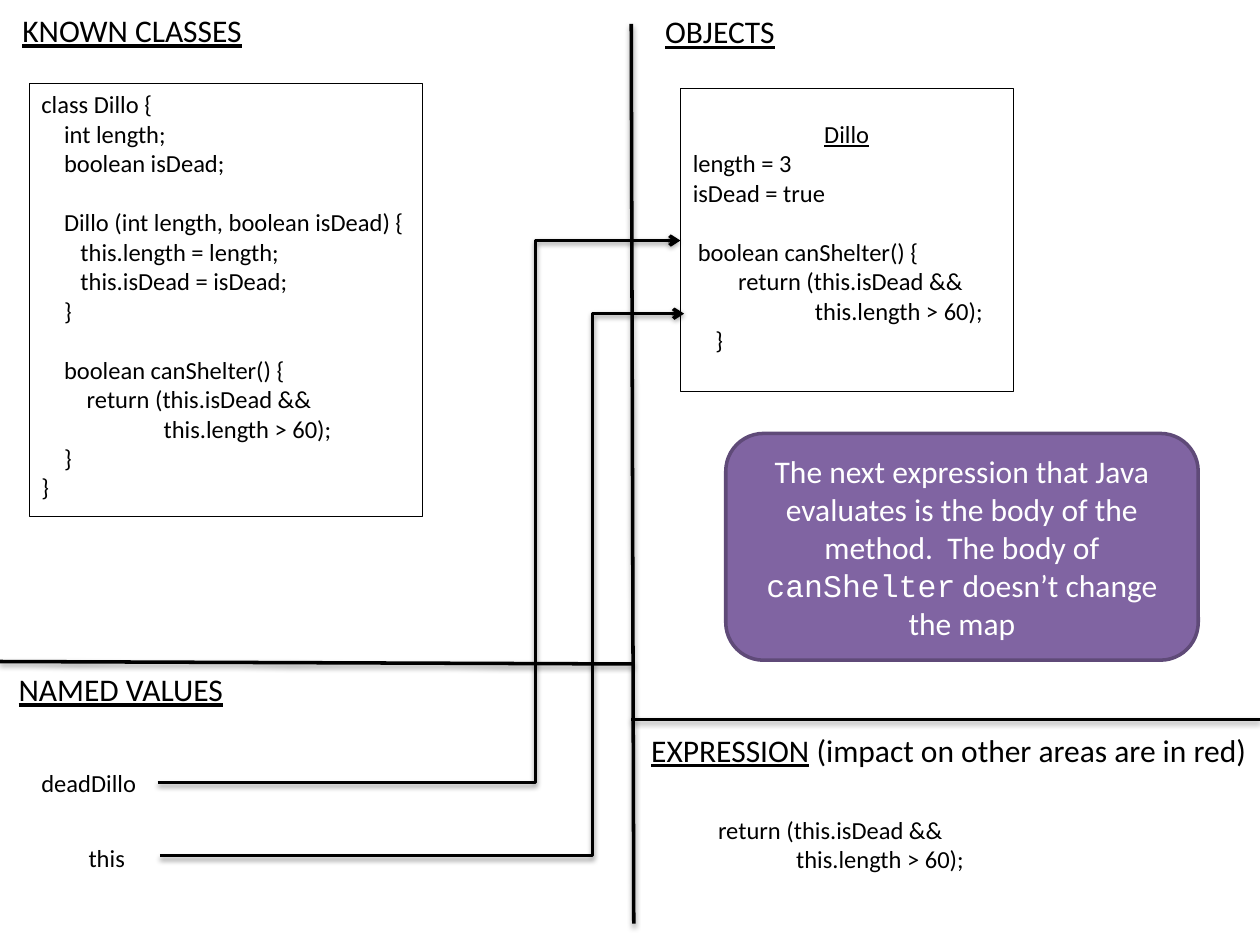
from lxml.etree import SubElement
from pptx import Presentation
from pptx.dml.color import RGBColor
from pptx.enum.shapes import MSO_CONNECTOR, MSO_SHAPE
from pptx.enum.text import MSO_ANCHOR, MSO_AUTO_SIZE, PP_ALIGN
from pptx.oxml import parse_xml
from pptx.oxml.ns import nsdecls, qn
from pptx.util import Inches, Pt

COLORS = {"ink": "000000", "white": "FFFFFF", "note": "8064A2", "note_edge": "5F4A78"}
BODY_FONT, CODE_FONT = "Calibri", "Courier New"
CODE_LINE = 17  # points left free by an empty line of code

# left, top, width, height, underlined words, plain words
HEADINGS = [
    (0.08, 0.04, 1.97, 0.4, "KNOWN CLASSES", ""),
    (5.18, 0.05, 1.09, 0.4, "OBJECTS", ""),
    (0.05, 5.27, 1.86, 0.4, "NAMED VALUES", ""),
    (5.07, 5.75, 4.98, 0.4, "EXPRESSION", " (impact on other areas are in red)"),
]
DIVIDERS = [(5.01, 0.19, 5.03, 7.33), (0, 5.25, 5.03, 5.27), (5.01, 5.71, 10, 5.71)]

# Code lines: indent in inches, words, empty lines before
CLASS_CODE = [
    (0, "class Dillo {", 0),
    (0.18, "int length;", 0),
    (0.18, "boolean isDead;", 0),
    (0.18, "Dillo (int length, boolean isDead) {", 1),
    (0.31, "this.length = length;", 0),
    (0.31, "this.isDead = isDead;", 0),
    (0.18, "}", 0),
    (0.18, "boolean canShelter() {", 1),
    (0.36, "return (this.isDead &&", 0),
    (0.97, "this.length > 60);", 0),
    (0.18, "}", 0),
    (0, "}", 0),
]
OBJECT_CODE = [
    (0, "Dillo", 0),
    (0, "length = 3", 0),
    (0, "isDead = true", 0),
    (0.04, "boolean canShelter() {", 1),
    (0.36, "return (this.isDead &&", 0),
    (0.97, "this.length > 60);", 0),
    (0.18, "}", 0),
]
EXPRESSION_CODE = [
    (0.04, "return (this.isDead &&", 0),
    (0.66, "this.length > 60);", 0),
]
# Name, its box, its alignment, then the arrow: start, end, x of the bend
NAMED_VALUES = [
    ("deadDillo", (0.23, 5.98, 1.01, 0.47), PP_ALIGN.LEFT, (1.25, 6.21), (5.4, 1.91), 4.25),
    ("this", (0.32, 6.57, 0.77, 0.47), PP_ALIGN.RIGHT, (1.27, 6.79), (5.43, 2.49), 4.7),
]
NOTE = [
    ("The next expression that Java evaluates is the body of the method.  The body of ", BODY_FONT),
    ("canShelter", CODE_FONT),
    (" doesn’t change the map", BODY_FONT),
]


def color(name):
    return RGBColor.from_string(COLORS[name])


def set_font(font, size, ink="ink", name=BODY_FONT):
    font.name, font.size = name, Pt(size)
    font.color.rgb = color(ink)


def add_text_box(slide, box, anchor=MSO_ANCHOR.MIDDLE):
    shape = slide.shapes.add_textbox(*map(Inches, box))
    shape.text_frame.word_wrap = True
    shape.text_frame.vertical_anchor = anchor
    return shape


def add_box(slide, preset, box, line, width, fill=None):
    shape = slide.shapes.add_shape(preset, *map(Inches, box))
    shape.shadow.inherit = False
    if fill:
        shape.fill.solid()
        shape.fill.fore_color.rgb = color(fill)
    else:
        shape.fill.background()
    shape.line.color.rgb = color(line)
    shape.line.width = Pt(width)
    shape.text_frame.word_wrap = True
    return shape


def write_code(shape, lines, anchor=MSO_ANCHOR.MIDDLE):
    frame = shape.text_frame
    frame.vertical_anchor = anchor
    for index, (indent, words, gap) in enumerate(lines):
        paragraph = frame.add_paragraph() if index else frame.paragraphs[0]
        paragraph.text = words
        paragraph.alignment = PP_ALIGN.LEFT
        paragraph.space_before = Pt(gap * CODE_LINE)
        paragraph._p.get_or_add_pPr().set("marL", str(Inches(indent)))
        set_font(paragraph.font, 14)


def add_line(slide, kind, start, end):
    """Draw a black line with a soft shadow below it."""
    line = slide.shapes.add_connector(kind, *map(Inches, (*start, *end)))
    line.line.color.rgb = color("ink")
    line.line.width = Pt(2)
    line._element.spPr.append(parse_xml(
        f'<a:effectLst {nsdecls("a")}><a:outerShdw blurRad="{Pt(3.1)}" dist="{Pt(1.6)}" '
        f'dir="5400000" rotWithShape="0"><a:srgbClr val="{COLORS["ink"]}">'
        '<a:alpha val="38000"/></a:srgbClr></a:outerShdw></a:effectLst>'))
    return line


def add_reference_arrow(slide, start, end, bend):
    arrow = add_line(slide, MSO_CONNECTOR.ELBOW, start, end)
    share = round((bend - start[0]) / (end[0] - start[0]) * 100000)
    guides = arrow._element.spPr.find(qn("a:prstGeom")).get_or_add_avLst()
    SubElement(guides, qn("a:gd"), name="adj1", fmla=f"val {share}")
    SubElement(arrow.line._get_or_add_ln(), qn("a:tailEnd"), type="arrow")


def main():
    presentation = Presentation()
    presentation.slide_width, presentation.slide_height = Inches(10), Inches(7.5)
    slide = presentation.slides.add_slide(presentation.slide_layouts[6])

    for *box, underlined, plain in HEADINGS:
        frame = add_text_box(slide, box, MSO_ANCHOR.TOP).text_frame
        frame.word_wrap = False
        frame.auto_size = MSO_AUTO_SIZE.SHAPE_TO_FIT_TEXT
        paragraph = frame.paragraphs[0]
        set_font(paragraph.font, 18)
        for words in filter(None, (underlined, plain)):
            run = paragraph.add_run()
            run.text = words
            run.font.underline = words == underlined

    for x1, y1, x2, y2 in DIVIDERS:
        add_line(slide, MSO_CONNECTOR.STRAIGHT, (x1, y1), (x2, y2))

    expression = add_text_box(slide, (5.56, 6.15, 3.15, 1.15))
    class_box = add_box(slide, MSO_SHAPE.RECTANGLE, (0.23, 0.66, 3.12, 3.44), "ink", 0.5)
    object_box = add_box(slide, MSO_SHAPE.RECTANGLE, (5.4, 0.7, 2.64, 2.41), "ink", 0.5)
    write_code(expression, EXPRESSION_CODE)
    write_code(class_box, CLASS_CODE, MSO_ANCHOR.TOP)
    write_code(object_box, OBJECT_CODE)
    for shape in (expression, object_box):
        shape.text_frame.margin_bottom = Inches(0.1)
    title = object_box.text_frame.paragraphs[0]
    title.alignment = PP_ALIGN.CENTER
    title.font.underline = True

    note = add_box(slide, MSO_SHAPE.ROUNDED_RECTANGLE, (5.76, 3.44, 3.75, 1.8),
                   "note_edge", 2, "note")
    note.text_frame.vertical_anchor = MSO_ANCHOR.MIDDLE
    paragraph = note.text_frame.paragraphs[0]
    paragraph.alignment = PP_ALIGN.CENTER
    for words, font_name in NOTE:
        run = paragraph.add_run()
        run.text = words
        set_font(run.font, 18, "white", font_name)

    for name, box, alignment, start, end, bend in NAMED_VALUES:
        label = add_text_box(slide, box)
        write_code(label, [(0, name, 0)])
        label.text_frame.paragraphs[0].alignment = alignment
        add_reference_arrow(slide, start, end, bend)

    presentation.save("out.pptx")


if __name__ == "__main__":
    main()
